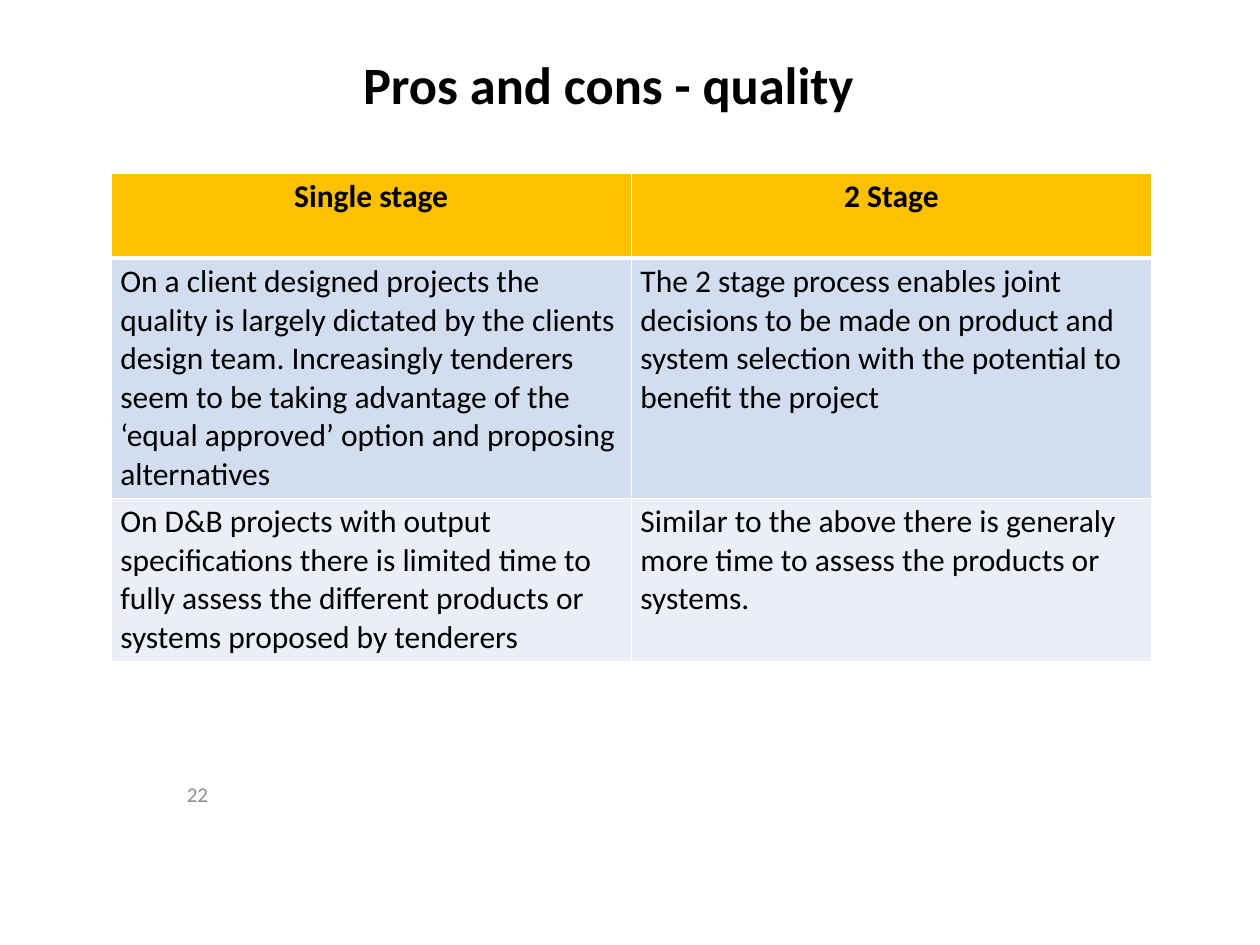
"""Build a slide comparing the quality of single and two stage tendering."""
from typing import NamedTuple

from lxml.etree import SubElement
from pptx import Presentation
from pptx.dml.color import RGBColor as RGB
from pptx.enum.text import MSO_ANCHOR as Anchor, MSO_AUTO_SIZE as AutoSize, PP_ALIGN as Align
from pptx.oxml.ns import qn
from pptx.util import Pt

COLORS = {"black": "000000", "white": "FFFFFF", "grey": "8C8C8C",
          "header": "FFC000", "band": "D2DEEF", "light": "EAEFF7"}


class Row(NamedTuple):
    height: float
    fill: str
    cells: tuple[str, str]
    header: bool = False


ROWS = [
    Row(48.5, "header", ("Single stage", "2 Stage"), True),
    Row(135.5, "band", (
        "On a client designed projects the quality is largely dictated by the clients design team. "
        "Increasingly tenderers seem to be taking advantage of the ‘equal approved’ option and "
        "proposing alternatives",
        "The 2 stage process enables joint decisions to be made on product and system selection "
        "with the potential to benefit the project")),
    Row(91.5, "light", (
        "On D&B projects with output specifications there is limited time to fully assess the "
        "different products or systems proposed by tenderers",
        "Similar to the above there is generaly more time to assess the products or systems.")),
]


def write(tf, text: str, *, size: float, color: str = "black", bold: bool = False,
          align=Align.LEFT) -> None:
    """Put one formatted paragraph into a text frame."""
    tf.word_wrap = True
    p = tf.paragraphs[0]
    p.alignment = align
    r = p.add_run()
    r.text = text
    r.font.name, r.font.size, r.font.bold = "Calibri", Pt(size), bold
    r.font.color.rgb = RGB.from_string(COLORS[color])


def place(sp, left: float, top: float, width: float, height: float) -> None:
    """Set a shape's position and size in points and centre its text vertically."""
    sp.left, sp.top, sp.width, sp.height = map(Pt, (left, top, width, height))
    sp.text_frame.auto_size = AutoSize.NONE
    sp.text_frame.vertical_anchor = Anchor.MIDDLE


def add_borders(cell, top: float, bottom: float) -> None:
    """Draw white lines around a cell, ahead of its fill."""
    tc_pr = cell._tc.get_or_add_tcPr()
    for side, width in (("L", 1), ("R", 1), ("T", top), ("B", bottom)):
        ln = SubElement(tc_pr, qn(f"a:ln{side}"), w=str(Pt(width)))
        fill = SubElement(ln, qn("a:solidFill"))
        SubElement(fill, qn("a:srgbClr"), val=COLORS["white"])


def add_comparison(slide, rows: list[Row], left: float, top: float, width: float) -> None:
    """Add the table of single and two stage columns."""
    height = sum(row.height for row in rows)
    table = slide.shapes.add_table(len(rows), 2, Pt(left), Pt(top), Pt(width), Pt(height)).table
    for i, row in enumerate(rows):
        table.rows[i].height = Pt(row.height)
        for j, text in enumerate(row.cells):
            cell = table.cell(i, j)
            cell.margin_left = cell.margin_right = Pt(5.25)
            cell.margin_top = cell.margin_bottom = Pt(2.7)
            add_borders(cell, 3 if i == 1 else 1, 3 if row.header else 1)
            cell.fill.solid()
            cell.fill.fore_color.rgb = RGB.from_string(COLORS[row.fill])
            write(cell.text_frame, text, size=18, bold=row.header,
                  align=Align.CENTER if row.header else Align.LEFT)


def main() -> None:
    """Build and save the slide."""
    prs = Presentation()
    prs.slide_width, prs.slide_height = Pt(720), Pt(540)
    slide = prs.slides.add_slide(prs.slide_layouts[5])

    number = slide.shapes.add_textbox(0, 0, 0, 0)
    place(number, 0, 443, 126, 21.5)
    write(number.text_frame, "22", size=12, color="grey", align=Align.RIGHT)

    title = slide.shapes.title
    place(title, 91.5, 16, 512.5, 63.5)
    write(title.text_frame, "Pros and cons - quality", size=30, bold=True, align=Align.CENTER)

    add_comparison(slide, ROWS, 63.5, 99, 594.5)
    prs.save("out.pptx")


if __name__ == "__main__":
    main()
